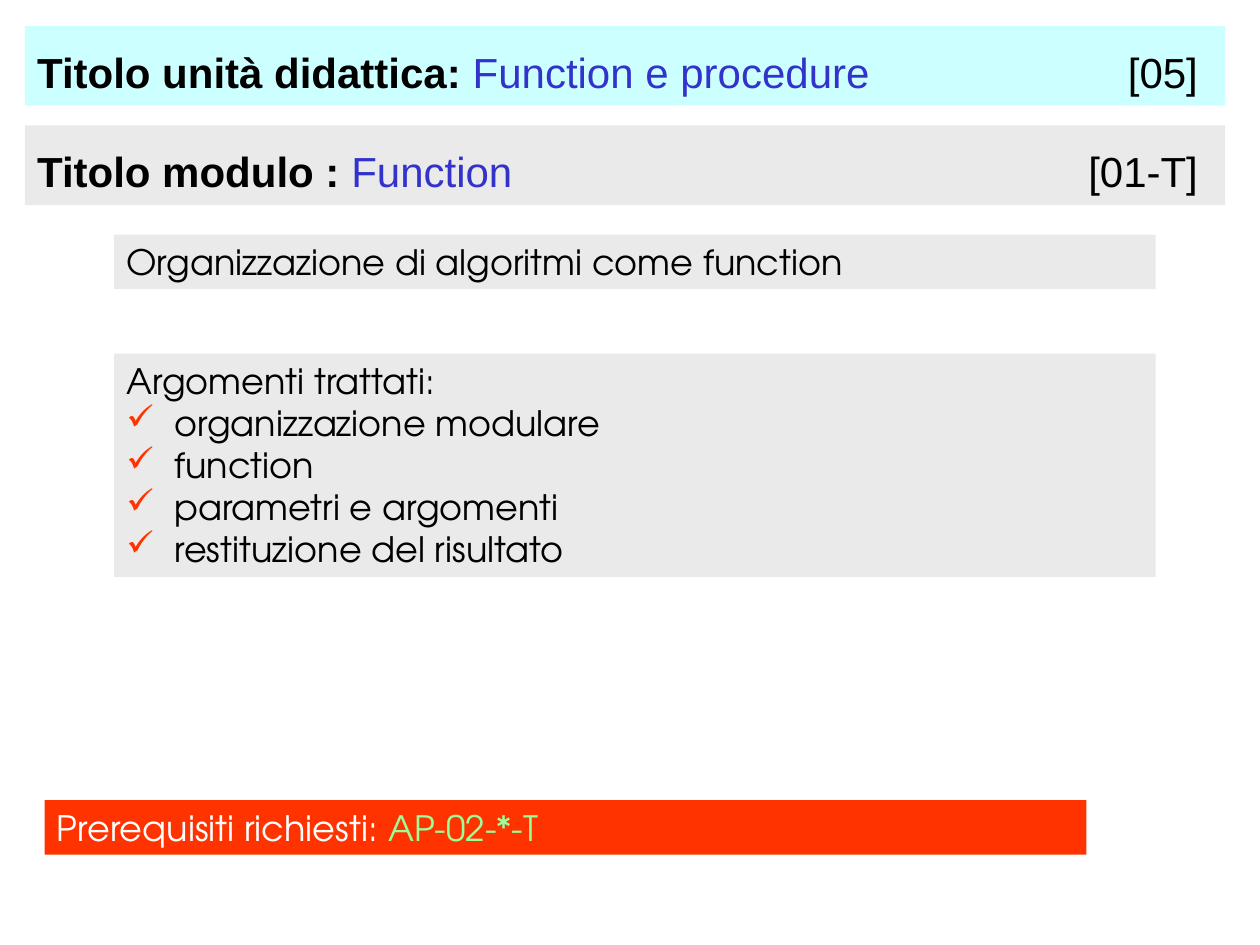
from dataclasses import dataclass

from lxml import etree
from pptx import Presentation
from pptx.dml.color import RGBColor
from pptx.enum.shapes import MSO_SHAPE
from pptx.enum.text import MSO_ANCHOR, PP_ALIGN
from pptx.oxml.ns import qn
from pptx.util import Cm, Pt

RECTANGLE = MSO_SHAPE.RECTANGLE
LEFT = PP_ALIGN.LEFT
TOP = MSO_ANCHOR.TOP
BOTTOM = MSO_ANCHOR.BOTTOM


@dataclass(frozen=True)
class Theme:
    cyan: str = "CCFFFF"
    grey: str = "EAEAEA"
    red: str = "FF3300"
    blue: str = "3333CC"
    green: str = "99FF99"
    black: str = "000000"
    white: str = "FFFFFF"
    title_font: str = "Arial"
    body_font: str = "TeX Gyre Adventor"
    title_size: int = 24
    body_size: int = 20


def add_text(paragraph, text, *, font, size, color, bold=False):
    run = paragraph.add_run()
    run.text = text
    run.font.name = font
    run.font.size = Pt(size)
    run.font.bold = bold
    run.font.color.rgb = RGBColor.from_string(color)


class LessonSlide:
    """Holds the theme and the slide, and draws each kind of panel on it."""

    def __init__(self, slide, theme):
        self.slide = slide
        self.theme = theme

    def panel(self, left, top, width, height, fill, anchor=TOP):
        box = self.slide.shapes.add_shape(
            RECTANGLE, Cm(left), Cm(top), Cm(width), Cm(height))
        box.shadow.inherit = False
        box.fill.solid()
        box.fill.fore_color.rgb = RGBColor.from_string(fill)
        box.line.fill.background()
        frame = box.text_frame
        frame.word_wrap = True
        frame.vertical_anchor = anchor
        frame.paragraphs[0].alignment = LEFT
        return frame

    def title_bar(self, top, fill, label, title, code):
        frame = self.panel(0.5, top, 24.2, 1.6, fill, BOTTOM)
        frame.margin_bottom = Cm(0.18)
        heading = frame.paragraphs[0]
        tabs = etree.SubElement(heading._p.get_or_add_pPr(), qn("a:tabLst"))
        etree.SubElement(tabs, qn("a:tab"), pos=str(Cm(23.4)), algn="r")
        parts = ((label, self.theme.black, True),
                 (title, self.theme.blue, False),
                 ("\t" + code, self.theme.black, False))
        for text, color, bold in parts:
            add_text(heading, text, font=self.theme.title_font,
                     size=self.theme.title_size, color=color, bold=bold)

    def body_panel(self, left, top, height, fill, parts):
        frame = self.panel(left, top, 21, height, fill)
        for text, color in parts:
            self.body_text(frame.paragraphs[0], text, color)
        return frame

    def body_text(self, paragraph, text, color):
        add_text(paragraph, text, font=self.theme.body_font,
                 size=self.theme.body_size, color=color)

    def check_list(self, frame, topics):
        for topic in topics:
            item = frame.add_paragraph()
            item.alignment = LEFT
            properties = item._p.get_or_add_pPr()
            properties.set("marL", str(Cm(0.97)))
            properties.set("indent", str(-Cm(0.97)))
            bullet_color = etree.SubElement(properties, qn("a:buClr"))
            etree.SubElement(bullet_color, qn("a:srgbClr"), val=self.theme.red)
            etree.SubElement(properties, qn("a:buChar"), char="✓")
            self.body_text(item, topic, self.theme.black)


def main():
    theme = Theme()
    deck = Presentation()
    deck.slide_width, deck.slide_height = Cm(25.4), Cm(19.05)
    lesson = LessonSlide(deck.slides.add_slide(deck.slide_layouts[6]), theme)

    lesson.title_bar(0.53, theme.cyan, "Titolo unità didattica: ",
                     "Function e procedure", "[05]")
    lesson.title_bar(2.53, theme.grey, "Titolo modulo : ",
                     "Function", "[01-T]")
    lesson.body_panel(2.3, 4.73, 1.1, theme.grey,
                      [("Organizzazione di algoritmi come function", theme.black)])
    topics = lesson.body_panel(2.3, 7.13, 4.5, theme.grey,
                               [("Argomenti trattati:", theme.black)])
    lesson.check_list(topics, ["organizzazione modulare", "function",
                               "parametri e argomenti",
                               "restituzione del risultato"])
    lesson.body_panel(0.9, 16.13, 1.1, theme.red,
                      [("Prerequisiti richiesti: ", theme.white),
                       ("AP-02-*-T", theme.green)])
    deck.save("out.pptx")


if __name__ == "__main__":
    main()
